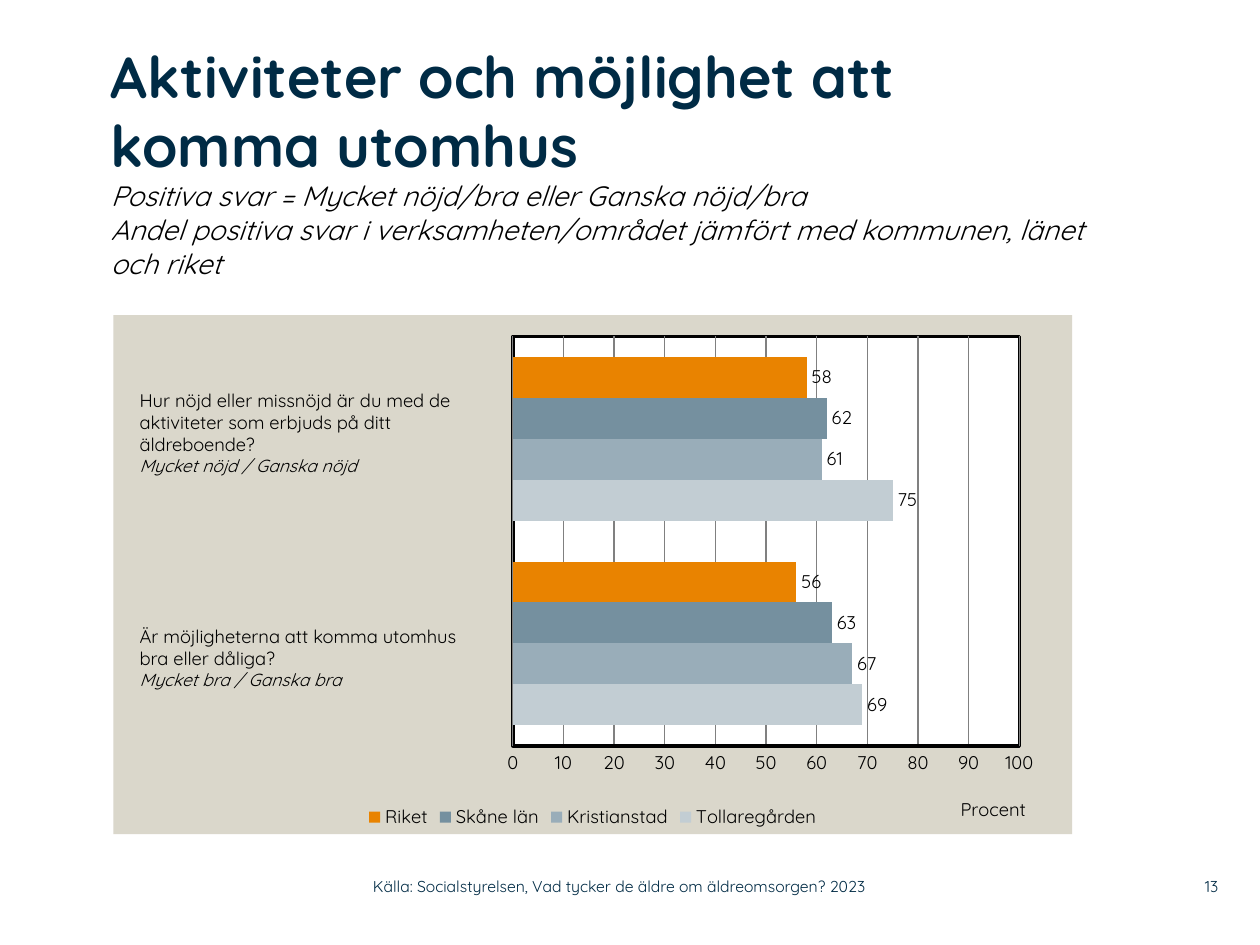
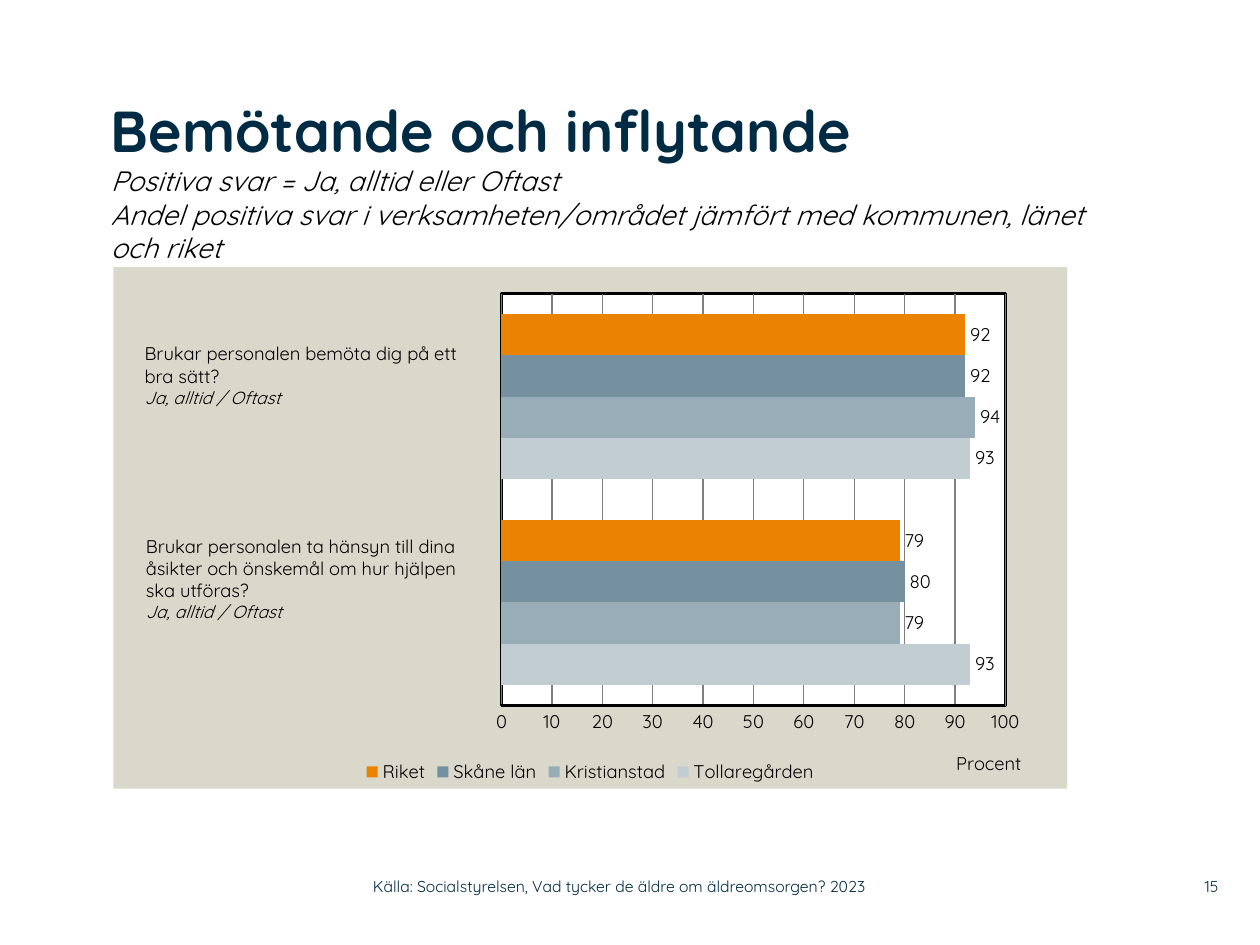
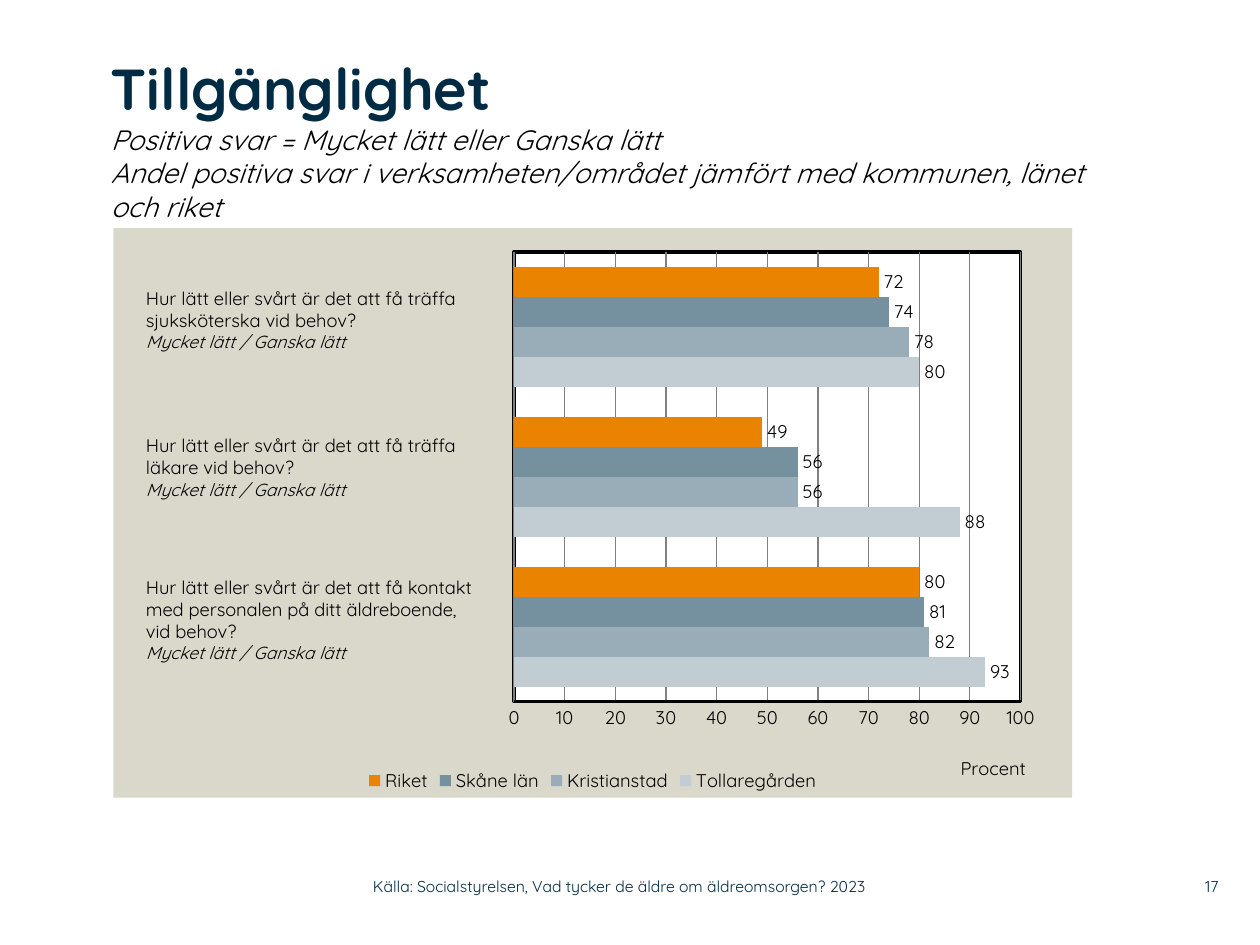
from dataclasses import dataclass
from typing import NamedTuple

from pptx import Presentation
from pptx.chart.chart import Chart
from pptx.chart.data import CategoryChartData
from pptx.dml.color import RGBColor
from pptx.enum.chart import XL_CHART_TYPE, XL_LABEL_POSITION, XL_LEGEND_POSITION, XL_TICK_MARK
from pptx.enum.text import MSO_ANCHOR, PP_ALIGN
from pptx.oxml import parse_xml
from pptx.oxml.ns import nsdecls, qn
from pptx.slide import Slide
from pptx.text.text import Font, TextFrame
from pptx.util import Inches, Pt

BAR_CLUSTERED = XL_CHART_TYPE.BAR_CLUSTERED
LABEL_OUTSIDE = XL_LABEL_POSITION.OUTSIDE_END
LEGEND_BOTTOM = XL_LEGEND_POSITION.BOTTOM
NO_TICKS = XL_TICK_MARK.NONE
TOP, MIDDLE = MSO_ANCHOR.TOP, MSO_ANCHOR.MIDDLE
LEFT, RIGHT = PP_ALIGN.LEFT, PP_ALIGN.RIGHT

# The slide is a grid of 100 columns and 75 rows of square cells
SLIDE_WIDTH, SLIDE_HEIGHT = Inches(10), Inches(7.5)
COLUMN, ROW = SLIDE_WIDTH / 100, SLIDE_HEIGHT / 75

# Shared style
FONT = "Quicksand"
NAVY, BLACK, WHITE = "002B45", "000000", "FFFFFF"
SAND, GRID_GRAY = "DAD7CB", "808080"
TITLE_SIZE, SUBTITLE_SIZE = 33, 16
BODY_SIZE, ANSWER_SIZE, FOOTER_SIZE = 10.5, 10, 9
INSET = 1

# Shared wording
COMPARISON = "Andel positiva svar i verksamheten/området jämfört med kommunen, länet och riket"
SOURCE = "Källa: Socialstyrelsen, Vad tycker de äldre om äldreomsorgen? 2023"
AXIS_TITLE = "Procent"
SERIES_COLORS = {
    "Tollaregården": "C2CDD3",
    "Kristianstad": "99ADB9",
    "Skåne län": "75909F",
    "Riket": "E98300",
}


class Box(NamedTuple):
    """Left, top, width and height in grid cells."""
    left: float
    top: float
    width: float
    height: float


SOURCE_BOX = Box(29.6, 68.9, 44.3, 2.9)
NUMBER_BOX = Box(92, 68.9, 4.7, 2.9)


@dataclass(frozen=True)
class Question:
    box: Box
    lines: list[str]
    answer: str
    values: tuple[int, int, int, int]  # in the order of SERIES_COLORS


@dataclass(frozen=True)
class SurveySlide:
    number: int
    title: str
    positive_answers: str
    title_box: Box
    chart_box: Box
    plot_box: Box
    questions: list[Question]  # from top to bottom


SURVEY_SLIDES = [
    SurveySlide(
        13, "Aktiviteter och möjlighet att komma utomhus",
        "Positiva svar = Mycket nöjd/bra eller Ganska nöjd/bra",
        Box(8.8, 3.2, 78, 18.9), Box(9, 25, 76.1, 41.2), Box(40.7, 26.7, 40.2, 32.5),
        [
            Question(
                Box(10.1, 30.4, 30, 9.8),
                ["Hur nöjd eller missnöjd är du med de aktiviteter som erbjuds på ditt äldreboende?"],
                "Mycket nöjd / Ganska nöjd", (75, 61, 62, 58)),
            Question(
                Box(10.1, 49.1, 30.1, 8.1),
                ["Är möjligheterna att komma utomhus", "bra eller dåliga?"],
                "Mycket bra / Ganska bra", (69, 67, 63, 56)),
        ]),
    SurveySlide(
        15, "Bemötande och inflytande",
        "Positiva svar = Ja, alltid eller Oftast",
        Box(8.8, 7.5, 80.4, 12), Box(9, 21.2, 75.7, 41.4), Box(39.8, 23.3, 40, 32.7),
        [
            Question(
                Box(10.5, 26.7, 29.7, 8.1),
                ["Brukar personalen bemöta dig på ett", "bra sätt?"],
                "Ja, alltid / Oftast", (93, 94, 92, 92)),
            Question(
                Box(10.6, 42, 30.1, 9.8),
                ["Brukar personalen ta hänsyn till dina",
                 "åsikter och önskemål om hur hjälpen", "ska utföras?"],
                "Ja, alltid / Oftast", (93, 79, 80, 79)),
        ]),
    SurveySlide(
        17, "Tillgänglighet",
        "Positiva svar = Mycket lätt eller Ganska lätt",
        Box(8.8, 4.2, 77.7, 13.9), Box(9, 18.1, 76.1, 45.2), Box(40.8, 20, 40.2, 35.7),
        [
            Question(
                Box(10.6, 22.3, 29.9, 8.1),
                ["Hur lätt eller svårt är det att få träffa sjuksköterska vid behov?"],
                "Mycket lätt / Ganska lätt", (80, 78, 74, 72)),
            Question(
                Box(10.6, 34, 29.3, 8.1),
                ["Hur lätt eller svårt är det att få träffa", "läkare vid behov?"],
                "Mycket lätt / Ganska lätt", (88, 56, 56, 49)),
            Question(
                Box(10.6, 45.2, 30.1, 9.8),
                ["Hur lätt eller svårt är det att få kontakt",
                 "med personalen på ditt äldreboende,", "vid behov?"],
                "Mycket lätt / Ganska lätt", (93, 82, 81, 80)),
        ]),
]


def color(value: str) -> RGBColor:
    return RGBColor.from_string(value)


def place(box: Box) -> tuple[int, int, int, int]:
    return (round(box.left * COLUMN), round(box.top * ROW),
            round(box.width * COLUMN), round(box.height * ROW))


def style(font: Font, size: float, hex_color: str,
          bold: bool = False, italic: bool = False) -> None:
    font.name, font.size = FONT, Pt(size)
    font.bold, font.italic = bold, italic
    font.color.rgb = color(hex_color)


# Text
def add_text(slide: Slide, box: Box, text: str, size: float, hex_color: str, inset: float = 0,
             anchor: MSO_ANCHOR = TOP, alignment: PP_ALIGN = LEFT) -> TextFrame:
    text_frame = slide.shapes.add_textbox(*place(box)).text_frame
    text_frame.word_wrap = True
    text_frame.vertical_anchor = anchor
    text_frame.margin_left = text_frame.margin_right = round(inset * COLUMN)
    text_frame.margin_top = text_frame.margin_bottom = round(inset * ROW / 2)
    text_frame.text = text
    for paragraph in text_frame.paragraphs:
        paragraph.alignment = alignment
        for run in paragraph.runs:
            style(run.font, size, hex_color)
    return text_frame


def add_title(slide: Slide, survey: SurveySlide) -> None:
    text = "\n".join([survey.title, survey.positive_answers, COMPARISON])
    heading, *subtitles = add_text(
        slide, survey.title_box, text, TITLE_SIZE, NAVY).paragraphs
    heading.runs[0].font.bold = True
    for paragraph in subtitles:
        style(paragraph.runs[0].font, SUBTITLE_SIZE, BLACK, italic=True)


def add_question(slide: Slide, question: Question) -> None:
    text = "\n".join([*question.lines, question.answer])
    text_frame = add_text(slide, question.box, text, BODY_SIZE, BLACK, INSET)
    style(text_frame.paragraphs[-1].runs[0].font, ANSWER_SIZE, BLACK, italic=True)


def add_footer(slide: Slide, number: int) -> None:
    add_text(slide, NUMBER_BOX, str(number), FOOTER_SIZE, NAVY, anchor=MIDDLE, alignment=RIGHT)
    add_text(slide, SOURCE_BOX, SOURCE, FOOTER_SIZE, NAVY, anchor=MIDDLE)


# Chart parts that need XML
def area_properties(fill: str, line: str):
    return parse_xml(
        f'<c:spPr {nsdecls("c", "a")}><a:solidFill><a:srgbClr val="{fill}"/></a:solidFill>'
        f'{line}</c:spPr>')


def set_layout(parent, position: int, target: str = "", **shares: float) -> None:
    """Place a chart part by shares of the chart's size."""
    previous = parent.find(qn("c:layout"))
    if previous is not None:
        parent.remove(previous)
    modes = "".join(f'<c:{axis}Mode val="edge"/>' for axis in "xy")
    sizes = "".join(f'<c:{name} val="{share:.4f}"/>' for name, share in shares.items())
    parent.insert(position, parse_xml(
        f'<c:layout {nsdecls("c")}><c:manualLayout>{target}{modes}{sizes}'
        '</c:manualLayout></c:layout>'))


def style_areas(chart: Chart, survey: SurveySlide) -> None:
    outer, inner = survey.chart_box, survey.plot_box
    chart_element = chart.element.find(qn("c:chart"))
    chart_element.addnext(area_properties(SAND, "<a:ln><a:noFill/></a:ln>"))
    plot_area = chart_element.find(qn("c:plotArea"))
    set_layout(plot_area, 0, '<c:layoutTarget val="inner"/>',
               x=(inner.left - outer.left) / outer.width,
               y=(inner.top - outer.top) / outer.height,
               w=inner.width / outer.width, h=inner.height / outer.height)
    plot_area.append(area_properties(
        WHITE, f'<a:ln w="{Pt(2)}"><a:solidFill><a:srgbClr val="{BLACK}"/></a:solidFill></a:ln>'))
    set_layout(plot_area.find(qn("c:valAx")).find(qn("c:title")), 1, x=0.88, y=0.92)


def style_value_axis(chart: Chart) -> None:
    axis = chart.value_axis
    axis.minimum_scale, axis.maximum_scale, axis.major_unit = 0, 100, 10
    axis.major_tick_mark = axis.minor_tick_mark = NO_TICKS
    axis.format.line.color.rgb = color(BLACK)
    axis.format.line.width = Pt(2)
    axis.has_major_gridlines = True
    axis.major_gridlines.format.line.color.rgb = color(GRID_GRAY)
    axis.major_gridlines.format.line.width = Pt(0.75)
    axis.axis_title.text_frame.text = AXIS_TITLE
    style(axis.axis_title.text_frame.paragraphs[0].runs[0].font, BODY_SIZE, BLACK)


def add_survey_chart(slide: Slide, survey: SurveySlide) -> None:
    # Bars are stacked from the bottom, so the last question comes first
    questions = survey.questions[::-1]
    chart_data = CategoryChartData()
    chart_data.categories = [str(index + 1) for index in range(len(questions))]
    for name, values in zip(SERIES_COLORS, zip(*(question.values for question in questions))):
        chart_data.add_series(name, values)
    chart = slide.shapes.add_chart(BAR_CLUSTERED, *place(survey.chart_box), chart_data).chart
    style(chart.font, BODY_SIZE, BLACK)
    chart.has_title = False
    chart.has_legend = True
    chart.legend.position = LEGEND_BOTTOM
    chart.legend.include_in_layout = False
    chart.category_axis.visible = False
    style_value_axis(chart)

    plot = chart.plots[0]
    plot.gap_width, plot.overlap = 100, 0
    plot.vary_by_categories = False
    plot.has_data_labels = True
    plot.data_labels.show_value = True
    plot.data_labels.position = LABEL_OUTSIDE
    style(plot.data_labels.font, BODY_SIZE, BLACK)
    for series, fill in zip(plot.series, SERIES_COLORS.values()):
        series.format.fill.solid()
        series.format.fill.fore_color.rgb = color(fill)
    style_areas(chart, survey)


def main() -> None:
    presentation = Presentation()
    presentation.slide_width, presentation.slide_height = SLIDE_WIDTH, SLIDE_HEIGHT
    blank_layout = presentation.slide_layouts[6]
    for survey in SURVEY_SLIDES:
        slide = presentation.slides.add_slide(blank_layout)
        add_survey_chart(slide, survey)
        add_title(slide, survey)
        for question in survey.questions:
            add_question(slide, question)
        add_footer(slide, survey.number)
    presentation.save("out.pptx")


if __name__ == "__main__":
    main()
